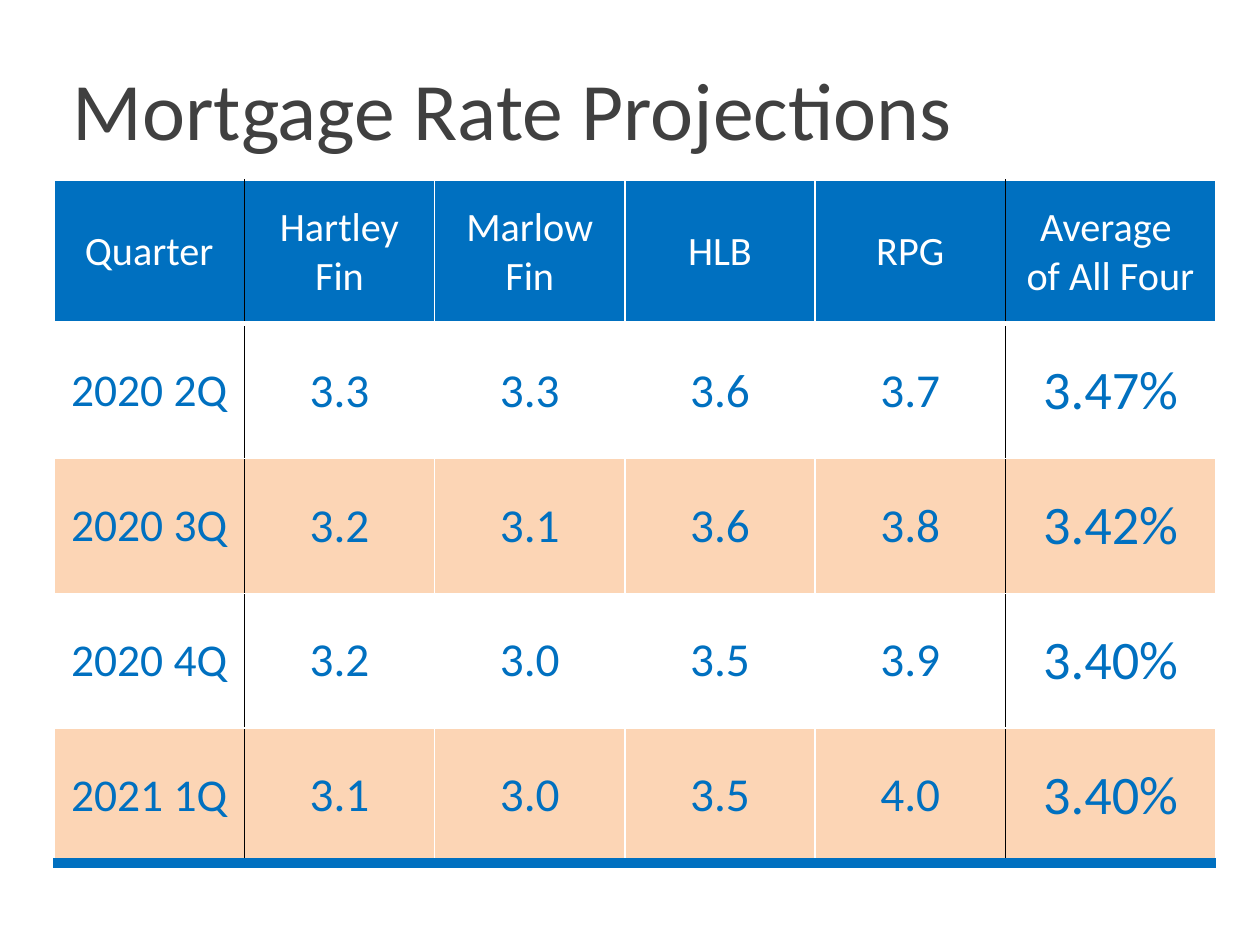
import pptx
import pptx.util
import pptx.dml.color
import pptx.enum.text
import pptx.oxml.ns
import lxml.etree

# Content
TITLE = "Mortgage Rate Projections"
HEAD = ["Quarter", "Hartley Fin", "Marlow Fin", "HLB", "RPG", "Average \nof All Four"]
BODY = [
    ["2020 2Q", "3.3", "3.3", "3.6", "3.7", "3.47%"],
    ["2020 3Q", "3.2", "3.1", "3.6", "3.8", "3.42%"],
    ["2020 4Q", "3.2", "3.0", "3.5", "3.9", "3.40%"],
    ["2021 1Q", "3.1", "3.0", "3.5", "4.0", "3.40%"],
]
ROWS = [HEAD] + BODY

# Theme
THEME = {
    "font": "Calibri",
    "title": "404040", "blue": "0070C0", "peach": "FCD5B5",
    "white": "FFFFFF", "black": "000000",
    "title_size": 46.6, "head_size": 23,
    "body_sizes": [26, 27, 27, 27, 27, 31],
}

# Layout in inches
WIDTHS = [1.51] * 5 + [1.67]
HEIGHTS = [1.14] + [1.07] * 4
RULED = {1, 5}  # column edges with a black line

Inches = pptx.util.Inches
Pt = pptx.util.Pt
qn = pptx.oxml.ns.qn


def rgb(name):
    return pptx.dml.color.RGBColor.from_string(THEME[name])


def write(para, text, size, color):
    run = para.add_run()
    run.text = text
    font = run.font
    font.name = THEME["font"]
    font.size = Pt(size)
    font.bold = False
    font.color.rgb = rgb(color)


def border(cell, side, color, width):
    props = cell._tc.get_or_add_tcPr()
    line = lxml.etree.SubElement(props, qn("a:" + side), w=str(Pt(width)))
    fill = lxml.etree.SubElement(line, qn("a:solidFill"))
    lxml.etree.SubElement(fill, qn("a:srgbClr"), val=THEME[color])


def edge_v(col):
    return ("black" if col in RULED else "white"), 1


def edge_h(row):
    if row == len(ROWS):
        return "blue", 6
    return "white", (3 if row == 1 else 1)


def style(cell, row, col, text):
    # Borders come before the fill in the cell properties
    border(cell, "lnL", *edge_v(col))
    border(cell, "lnR", *edge_v(col + 1))
    border(cell, "lnT", *edge_h(row))
    border(cell, "lnB", *edge_h(row + 1))
    if row == 0:
        fill, ink, size = "blue", "white", THEME["head_size"]
    else:
        fill = "white" if row % 2 else "peach"
        ink, size = "blue", THEME["body_sizes"][col]
    cell.fill.solid()
    cell.fill.fore_color.rgb = rgb(fill)
    cell.vertical_anchor = pptx.enum.text.MSO_ANCHOR.MIDDLE
    cell.margin_left = cell.margin_right = Inches(0.1)
    cell.margin_top = cell.margin_bottom = Inches(0.06)
    frame = cell.text_frame
    for i, part in enumerate(text.split("\n")):
        para = frame.add_paragraph() if i else frame.paragraphs[0]
        para.alignment = pptx.enum.text.PP_ALIGN.CENTER
        write(para, part, size, ink)


def main():
    deck = pptx.Presentation()
    deck.slide_width, deck.slide_height = Inches(10), Inches(7.5)
    slide = deck.slides.add_slide(deck.slide_layouts[6])

    # Title
    box = slide.shapes.add_textbox(Inches(0.48), Inches(0.42), Inches(8.41), Inches(0.89))
    box.text_frame.word_wrap = True
    write(box.text_frame.paragraphs[0], TITLE, THEME["title_size"], "title")

    # Rate table
    table = slide.shapes.add_table(
        len(ROWS), len(HEAD), Inches(0.43), Inches(1.43),
        Inches(sum(WIDTHS)), Inches(sum(HEIGHTS))).table
    table.horz_banding = False
    for col, width in zip(table.columns, WIDTHS):
        col.width = Inches(width)
    for row, height in zip(table.rows, HEIGHTS):
        row.height = Inches(height)
    for r, texts in enumerate(ROWS):
        for c, text in enumerate(texts):
            style(table.cell(r, c), r, c, text)

    deck.save("out.pptx")


if __name__ == "__main__":
    main()
